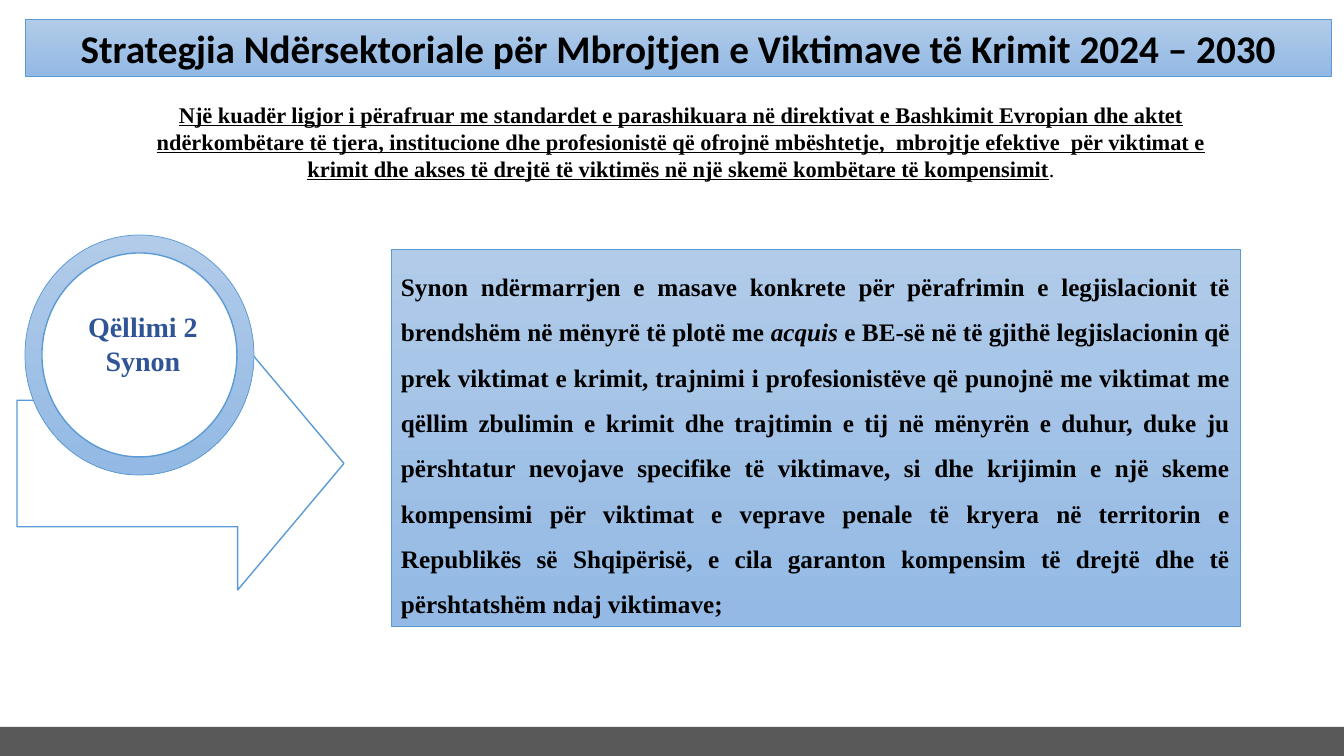
from dataclasses import dataclass

from pptx import Presentation
from pptx.dml.color import RGBColor
from pptx.enum.shapes import MSO_SHAPE as Preset
from pptx.enum.text import MSO_ANCHOR as Anchor, MSO_AUTO_SIZE as AutoSize, PP_ALIGN as Align
from pptx.util import Pt

EMU_PER_PX = 914400 / 100.8


@dataclass(frozen=True)
class Theme:
    black: str = "000000"
    white: str = "FFFFFF"
    accent: str = "5B9BD5"
    gradient: tuple = ("B1CBE9", "93B9E4")
    goal: str = "2F5597"
    footer: str = "595959"
    heading_font: str = "Calibri"
    text_font: str = "Times New Roman"
    heading_size: int = 28
    goal_size: int = 20
    body_size: int = 18
    vision_size: int = 16


THEME = Theme()

HEADING = "Strategjia Ndërsektoriale për Mbrojtjen e Viktimave të Krimit 2024 – 2030"
VISION = (
    "Një kuadër ligjor i përafruar me standardet e parashikuara në direktivat e "
    "Bashkimit Evropian dhe aktet ndërkombëtare të tjera, institucione dhe "
    "profesionistë që ofrojnë mbështetje,  mbrojtje efektive  për viktimat e krimit "
    "dhe akses të drejtë të viktimës në një skemë kombëtare të kompensimit"
)
AIM_START = (
    "Synon ndërmarrjen e masave konkrete për përafrimin e legjislacionit të "
    "brendshëm në mënyrë të plotë me "
)
AIM_TERM = "acquis"
AIM_END = (
    " e BE-së në të gjithë legjislacionin që prek viktimat e krimit, trajnimi i "
    "profesionistëve që punojnë me viktimat me qëllim zbulimin e krimit dhe "
    "trajtimin e tij në mënyrën e duhur, duke ju përshtatur nevojave specifike të "
    "viktimave, si dhe krijimin e një skeme kompensimi për viktimat e veprave penale "
    "të kryera në territorin e Republikës së Shqipërisë, e cila garanton kompensim "
    "të drejtë dhe të përshtatshëm ndaj viktimave;"
)


def px(length):
    return round(length * EMU_PER_PX)


def box(*lengths):
    return [px(length) for length in lengths]


def paint_solid(shape, color):
    shape.fill.solid()
    shape.fill.fore_color.rgb = RGBColor.from_string(color)


def paint_gradient(shape):
    """Fill from light at the top to dark at the bottom."""
    shape.fill.gradient()
    shape.fill.gradient_angle = 270
    for stop, color in zip(shape.fill.gradient_stops, THEME.gradient):
        stop.color.rgb = RGBColor.from_string(color)


def outline(shape, width):
    shape.line.color.rgb = RGBColor.from_string(THEME.accent)
    shape.line.width = Pt(width)


def add_preset(slide, preset, *bounds):
    shape = slide.shapes.add_shape(preset, *box(*bounds))
    shape.shadow.inherit = False
    return shape


def add_white_shape(slide, preset, *bounds):
    shape = add_preset(slide, preset, *bounds)
    paint_solid(shape, THEME.white)
    outline(shape, 1)
    return shape


def add_gradient_shape(slide, preset, *bounds):
    shape = add_preset(slide, preset, *bounds)
    paint_gradient(shape)
    outline(shape, 0.5)
    return shape


def write(shape, paragraphs, size, align, font=THEME.text_font, color=THEME.black,
          anchor=Anchor.TOP):
    """Write bold paragraphs, each a list of run texts, and return their runs."""
    frame = shape.text_frame
    frame.word_wrap = True
    frame.auto_size = AutoSize.NONE
    frame.vertical_anchor = anchor
    runs = []
    for index, texts in enumerate(paragraphs):
        paragraph = frame.add_paragraph() if index else frame.paragraphs[0]
        paragraph.alignment = align
        paragraph.font.name = font
        paragraph.font.size = Pt(size)
        paragraph.font.bold = True
        paragraph.font.color.rgb = RGBColor.from_string(color)
        for text in texts:
            run = paragraph.add_run()
            run.text = text
            runs.append(run)
    return runs


def add_footer(slide):
    footer = add_preset(slide, Preset.RECTANGLE, 0, 727, 1344, 29)
    paint_solid(footer, THEME.footer)
    footer.line.fill.background()


def add_goal(slide):
    arrow = add_white_shape(slide, Preset.RIGHT_ARROW, 17, 337, 327, 253)
    arrow.adjustments[0] = 0.5
    arrow.adjustments[1] = 0.42
    add_gradient_shape(slide, Preset.OVAL, 25, 235, 229, 240)
    add_white_shape(slide, Preset.OVAL, 42, 253, 195, 204)
    label = slide.shapes.add_textbox(*box(47, 305, 192, 78))
    write(label, [["Qëllimi 2"], ["Synon"]], THEME.goal_size, Align.CENTER,
          color=THEME.goal)


def set_heading(slide):
    heading = slide.shapes.title
    heading.left, heading.top, heading.width, heading.height = box(25, 19, 1306, 57)
    paint_gradient(heading)
    outline(heading, 0.5)
    write(heading, [[HEADING]], THEME.heading_size, Align.CENTER,
          font=THEME.heading_font, anchor=Anchor.MIDDLE)


def add_vision(slide):
    vision = slide.shapes.add_textbox(*box(121, 96, 1120, 92))
    statement, full_stop = write(vision, [[VISION, "."]], THEME.vision_size, Align.CENTER)
    statement.font.underline = True
    full_stop.font.bold = False


def add_aim(slide):
    aim = add_gradient_shape(slide, Preset.RECTANGLE, 391, 249, 849, 377)
    _, term, _ = write(aim, [[AIM_START, AIM_TERM, AIM_END]], THEME.body_size,
                       Align.JUSTIFY, anchor=Anchor.MIDDLE)
    term.font.italic = True
    aim.text_frame.paragraphs[0].line_spacing = 1.5


def main():
    deck = Presentation()
    deck.slide_width, deck.slide_height = box(1344, 756)
    title_only = deck.slide_layouts[5]
    slide = deck.slides.add_slide(title_only)
    add_footer(slide)
    add_goal(slide)
    set_heading(slide)
    add_vision(slide)
    add_aim(slide)
    deck.save("out.pptx")


if __name__ == "__main__":
    main()
